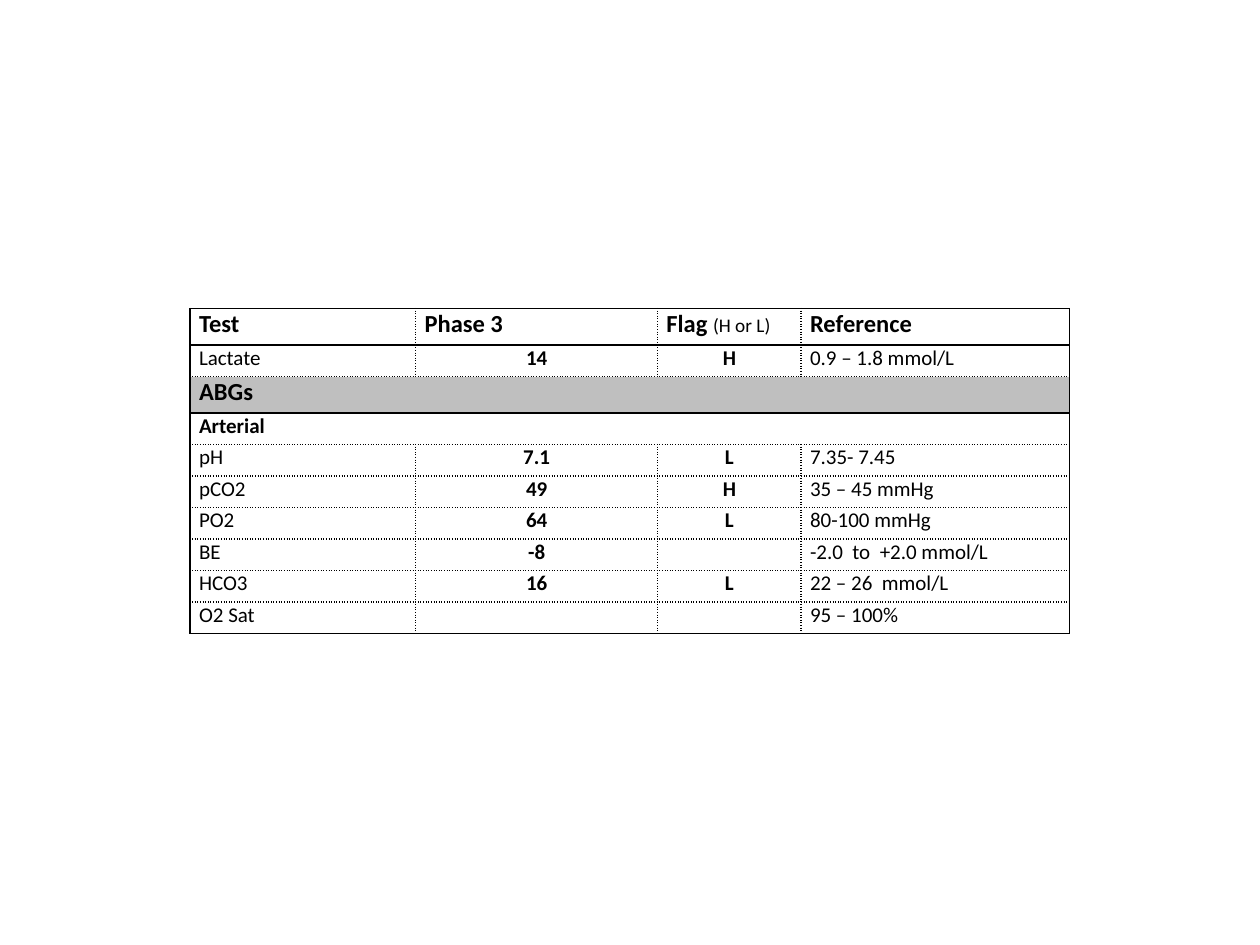
"""Build a slide with a table of arterial blood gas results."""
from dataclasses import dataclass

from lxml import etree
from pptx import Presentation
from pptx import util as u
from pptx.dml.color import RGBColor
from pptx.enum import text
from pptx.oxml import ns


@dataclass(frozen=True)
class Theme:
    """Fonts, type sizes in points and colours of the slide."""
    font: str = "Calibri"
    heading: int = 14
    body: int = 12
    note: int = 11
    ink: str = "000000"
    paper: str = "FFFFFF"
    band: str = "BFBFBF"


THEME = Theme()
COLUMN_WIDTHS = (1.79, 1.92, 1.14, 2.13)
HEADING_HEIGHT, BODY_HEIGHT = 0.29, 0.25
ROWS = (
    ("Test", "Phase 3", "Flag ", "Reference"),
    ("Lactate", "14", "H", "0.9 – 1.8 mmol/L"),
    ("ABGs",),
    ("Arterial",),
    ("pH", "7.1", "L", "7.35- 7.45"),
    ("pCO2", "49", "H", "35 – 45 mmHg"),
    ("PO2", "64", "L", "80-100 mmHg"),
    ("BE", "-8", "", "-2.0  to  +2.0 mmol/L"),
    ("HCO3", "16", "L", "22 – 26  mmol/L"),
    ("O2 Sat", "", "", "95 – 100%"),
)
FLAG_NOTE = "(H or L)"
HEADER_ROW, BAND_ROW = 0, 2
HEADING_ROWS = (HEADER_ROW, BAND_ROW)
SPANNING_ROWS = tuple(i for i, row in enumerate(ROWS) if len(row) == 1)
CENTRED_COLUMNS = (1, 2)
SOLID_HORIZONTALS = (0, 1, 3, len(ROWS))
SOLID_VERTICALS = (0, len(COLUMN_WIDTHS))


def add_border(cell, side, solid):
    """Draw one side of a cell as a solid or dotted line."""
    properties = cell._tc.get_or_add_tcPr()
    line = etree.SubElement(properties, ns.qn(f"a:ln{side}"), w=str(u.Pt(1)))
    fill = etree.SubElement(line, ns.qn("a:solidFill"))
    etree.SubElement(fill, ns.qn("a:srgbClr"), val=THEME.ink)
    etree.SubElement(line, ns.qn("a:prstDash"), val="solid" if solid else "dot")


def add_borders(cell, row, column):
    """Draw all sides of a cell by its place in the grid."""
    spanning = row in SPANNING_ROWS
    add_border(cell, "L", spanning or column in SOLID_VERTICALS)
    add_border(cell, "R", spanning or column + 1 in SOLID_VERTICALS)
    add_border(cell, "T", row in SOLID_HORIZONTALS)
    add_border(cell, "B", row + 1 in SOLID_HORIZONTALS)


def fill_cell(cell, row):
    """Fill heading cells and leave the others clear."""
    if row in HEADING_ROWS:
        cell.fill.solid()
        color = THEME.band if row == BAND_ROW else THEME.paper
        cell.fill.fore_color.rgb = RGBColor.from_string(color)
    else:
        cell.fill.background()


def format_run(run, size, bold):
    """Set the font of one run."""
    run.font.name = THEME.font
    run.font.size = u.Pt(size)
    run.font.bold = bold
    run.font.color.rgb = RGBColor.from_string(THEME.ink)


def write_cell(cell, content, row, column):
    """Write and format the text of one cell."""
    cell.margin_left = cell.margin_right = u.Inches(0.07)
    cell.margin_top = cell.margin_bottom = 0
    size = THEME.heading if row in HEADING_ROWS else THEME.body
    bold = row in (HEADER_ROW, *SPANNING_ROWS) or column in CENTRED_COLUMNS
    paragraph = cell.text_frame.paragraphs[0]
    if row != HEADER_ROW and column in CENTRED_COLUMNS:
        paragraph.alignment = text.PP_ALIGN.CENTER
    if not content:
        etree.SubElement(paragraph._p, ns.qn("a:endParaRPr"), sz=str(size * 100))
        return
    paragraph.text = content
    format_run(paragraph.runs[0], size, bold)
    if (row, column) == (HEADER_ROW, 2):
        note = paragraph.add_run()
        note.text = FLAG_NOTE
        format_run(note, THEME.note, False)


def add_results_table(slide):
    """Add the table of test results."""
    heights = [HEADING_HEIGHT if i in HEADING_ROWS else BODY_HEIGHT for i in range(len(ROWS))]
    shape = slide.shapes.add_table(
        len(ROWS), len(COLUMN_WIDTHS), u.Inches(1.51), u.Inches(2.45),
        u.Inches(sum(COLUMN_WIDTHS)), u.Inches(sum(heights)))
    table = shape.table
    table.first_row = table.horz_banding = False
    for column, width in zip(table.columns, COLUMN_WIDTHS):
        column.width = u.Inches(width)
    for row, height in zip(table.rows, heights):
        row.height = u.Inches(height)
    for i, contents in enumerate(ROWS):
        for j in range(len(COLUMN_WIDTHS)):
            cell = table.cell(i, j)
            write_cell(cell, contents[j] if j < len(contents) else "", i, j)
            add_borders(cell, i, j)
            fill_cell(cell, i)
    for i in SPANNING_ROWS:
        table.cell(i, 0).merge(table.cell(i, len(COLUMN_WIDTHS) - 1))


def main():
    """Build and save the presentation."""
    presentation = Presentation()
    presentation.slide_width = u.Inches(10)
    presentation.slide_height = u.Inches(7.5)
    slide = presentation.slides.add_slide(presentation.slide_layouts[6])
    add_results_table(slide)
    presentation.save("out.pptx")


if __name__ == "__main__":
    main()
